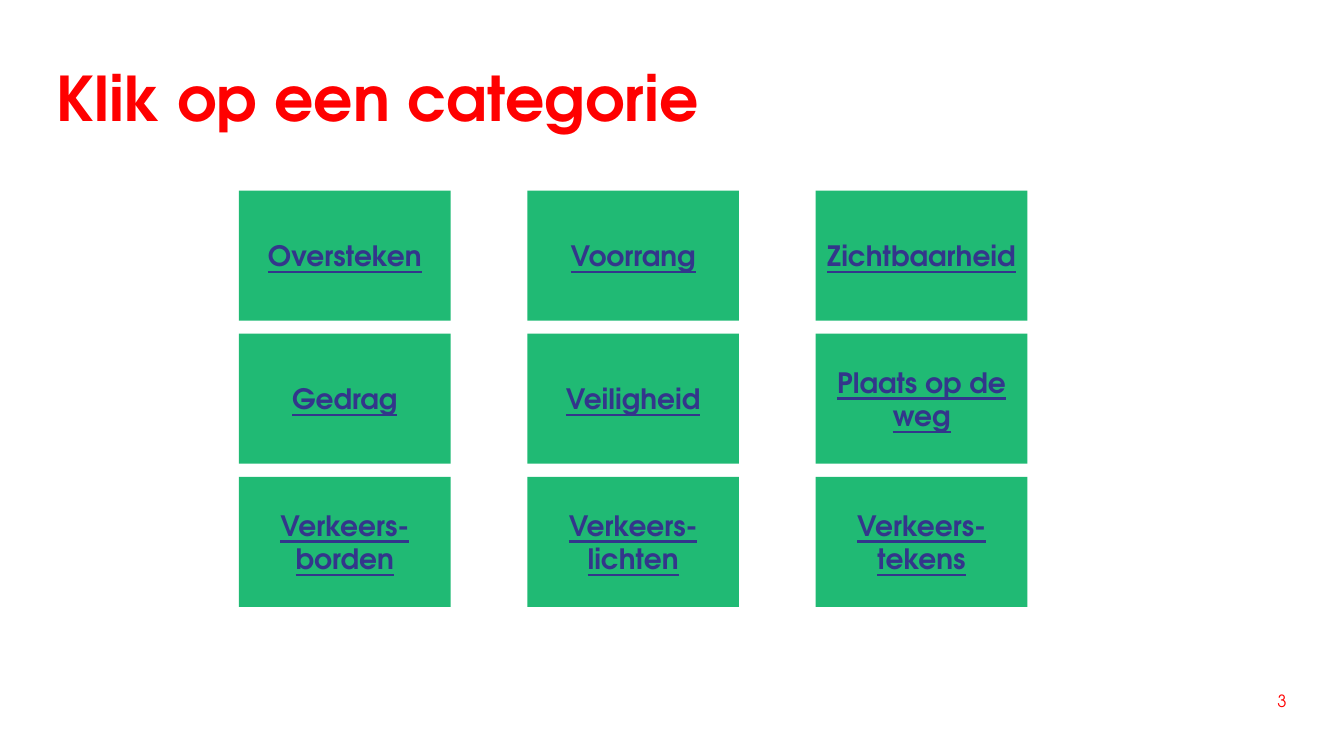
from pptx import Presentation
from pptx.dml.color import RGBColor
from pptx.enum.shapes import MSO_SHAPE as Shape
from pptx.enum.text import MSO_ANCHOR as Anchor, PP_ALIGN as Align
from pptx.util import Inches, Pt

RED = RGBColor(0xFF, 0x00, 0x00)
GREEN = RGBColor(0x20, 0xBA, 0x74)
INDIGO = RGBColor(0x33, 0x36, 0x8B)
FONT = "TeX Gyre Adventor"

TITLE_FORMAT = {"size": Pt(44), "bold": True}
NUMBER_FORMAT = {"size": Pt(12)}
CARD_FORMAT = {"size": Pt(20), "bold": True, "underline": True}

CATEGORIES = [
    ["Oversteken", "Voorrang", "Zichtbaarheid"],
    ["Gedrag", "Veiligheid", "Plaats op de weg"],
    ["Verkeers-borden", "Verkeers-lichten", "Verkeers-tekens"],
]
GRID_LEFT, GRID_TOP = 2.37, 1.89
COLUMN_STEP, ROW_STEP = 2.86, 1.42
CARD_WIDTH, CARD_HEIGHT = 2.1, 1.29


def write(box, text, color, font_format, align, anchor):
    """Fill a box with one formatted paragraph and return that paragraph."""
    frame = box.text_frame
    frame.word_wrap = True
    frame.vertical_anchor = anchor
    para = frame.paragraphs[0]
    para.alignment = align
    span = para.add_run()
    span.text = text
    span.font.name = FONT
    span.font.color.rgb = color
    for name, value in font_format.items():
        setattr(span.font, name, value)
    return para


deck = Presentation()
deck.slide_width, deck.slide_height = Inches(13.33), Inches(7.5)
page = deck.slides.add_slide(deck.slide_layouts[6])

title = page.shapes.add_textbox(Inches(0.46), Inches(0.28), Inches(12.41), Inches(1.45))
title_para = write(title, "Klik op een categorie", RED, TITLE_FORMAT, Align.LEFT, Anchor.MIDDLE)
title_para.line_spacing = 0.9

for row, names in enumerate(CATEGORIES):
    for column, name in enumerate(names):
        card = page.shapes.add_shape(
            Shape.RECTANGLE,
            Inches(GRID_LEFT + column * COLUMN_STEP),
            Inches(GRID_TOP + row * ROW_STEP),
            Inches(CARD_WIDTH),
            Inches(CARD_HEIGHT),
        )
        card.shadow.inherit = False
        card.fill.solid()
        card.fill.fore_color.rgb = GREEN
        card.line.fill.background()
        write(card, name, INDIGO, CARD_FORMAT, Align.CENTER, Anchor.MIDDLE)

number = page.shapes.add_textbox(Inches(10.48), Inches(6.8), Inches(2.38), Inches(0.3))
write(number, "3", RED, NUMBER_FORMAT, Align.RIGHT, Anchor.BOTTOM)

deck.save("out.pptx")
